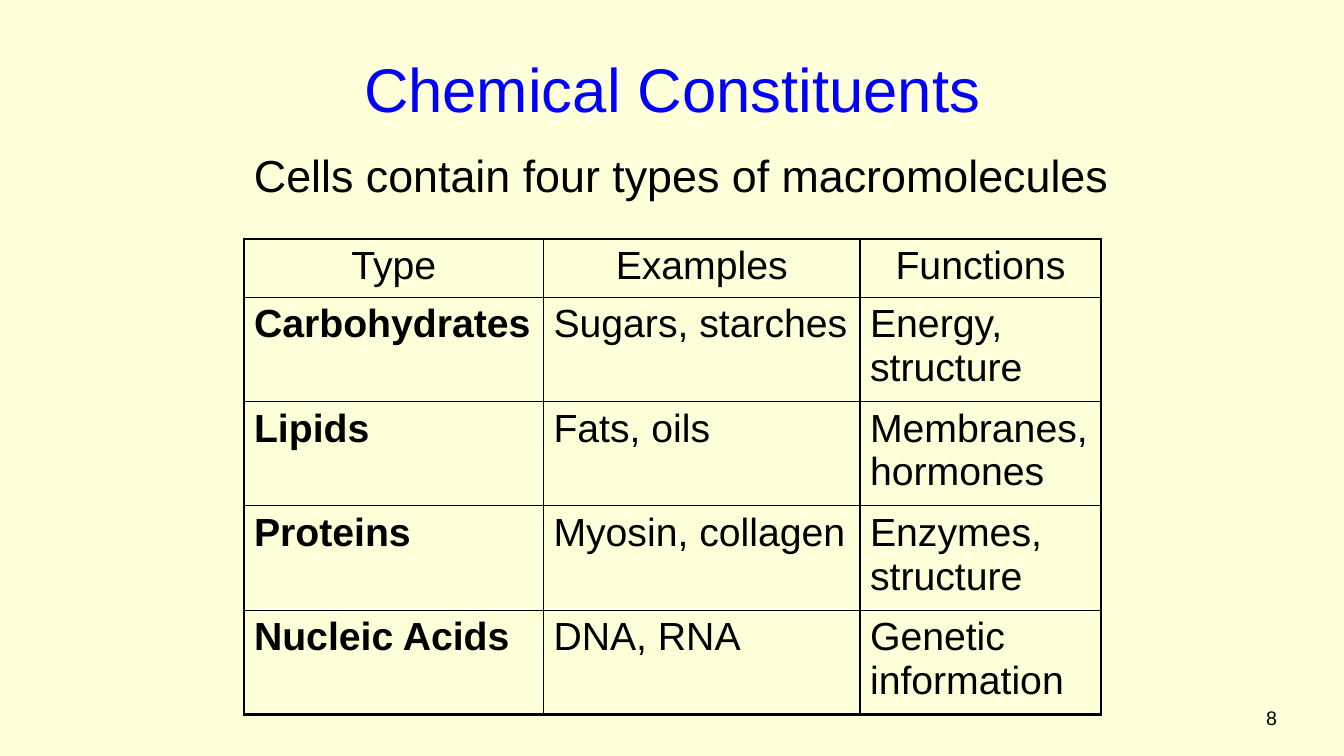
from dataclasses import dataclass

from lxml import etree
from pptx import Presentation
from pptx.dml.color import RGBColor
from pptx.enum import text
from pptx.oxml import ns
from pptx.util import Inches, Pt


@dataclass(frozen=True)
class Theme:
    font: str = "Arial"
    background: str = "FFFFD9"
    title: str = "0000FF"
    ink: str = "000000"
    title_size: int = 44
    body_size: int = 32
    table_size: int = 28
    number_size: int = 14
    outer_line: float = 2.25
    inner_line: float = 1


@dataclass(frozen=True)
class Label:
    words: str
    left: float
    top: float
    width: float
    height: float
    size: int
    color: str
    align: text.PP_ALIGN = text.PP_ALIGN.LEFT
    anchor: text.MSO_ANCHOR = text.MSO_ANCHOR.TOP
    wrap: bool = True


@dataclass(frozen=True)
class Macromolecule:
    kind: str
    examples: str
    functions: str


THEME = Theme()
LABELS = [
    Label("Chemical Constituents", 2.42, 0.25, 8.5, 1.25, THEME.title_size, THEME.title,
          text.PP_ALIGN.CENTER, text.MSO_ANCHOR.MIDDLE),
    Label("Cells contain four types of macromolecules", 2.42, 1.42, 8.92, 0.67,
          THEME.body_size, THEME.ink),
    Label("8", 12.46, 6.95, 0.44, 0.34, THEME.number_size, THEME.ink, wrap=False),
]
ROWS = [
    Macromolecule("Type", "Examples", "Functions"),
    Macromolecule("Carbohydrates", "Sugars, starches", "Energy, structure"),
    Macromolecule("Lipids", "Fats, oils", "Membranes, hormones"),
    Macromolecule("Proteins", "Myosin, collagen", "Enzymes, structure"),
    Macromolecule("Nucleic Acids", "DNA, RNA", "Genetic information"),
]
COLUMN_WIDTHS = [2.97, 3.14, 2.39]
HEADER_HEIGHT, ROW_HEIGHT = 0.58, 1.03


def write(tf, words: str, size: int, color: str, align: text.PP_ALIGN, bold: bool = False) -> None:
    tf.text = words
    p = tf.paragraphs[0]
    p.alignment = align
    font = p.runs[0].font
    font.name, font.size, font.bold = THEME.font, Pt(size), bold
    font.color.rgb = RGBColor.from_string(color)


def add_label(slide, label: Label) -> None:
    sp = slide.shapes.add_textbox(Inches(label.left), Inches(label.top),
                                  Inches(label.width), Inches(label.height))
    tf = sp.text_frame
    tf.word_wrap = label.wrap
    tf.vertical_anchor = label.anchor
    write(tf, label.words, label.size, label.color, label.align)


def add_border(cell, side: str, width: float) -> None:
    tc_pr = cell._tc.get_or_add_tcPr()
    ln = etree.SubElement(tc_pr, ns.qn(f"a:ln{side}"), w=str(Pt(width)))
    fill = etree.SubElement(ln, ns.qn("a:solidFill"))
    etree.SubElement(fill, ns.qn("a:srgbClr"), val=THEME.ink)


def add_macromolecule_table(slide, left: float, top: float) -> None:
    heights = [HEADER_HEIGHT] + [ROW_HEIGHT] * (len(ROWS) - 1)
    frame = slide.shapes.add_table(len(ROWS), len(COLUMN_WIDTHS), Inches(left), Inches(top),
                                   Inches(sum(COLUMN_WIDTHS)), Inches(sum(heights)))
    table = frame.table
    table.first_row = table.horz_banding = False
    for column, width in zip(table.columns, COLUMN_WIDTHS):
        column.width = Inches(width)
    last_row, last_col = len(ROWS) - 1, len(COLUMN_WIDTHS) - 1
    for i, (row, height) in enumerate(zip(ROWS, heights)):
        table.rows[i].height = Inches(height)
        for j, words in enumerate((row.kind, row.examples, row.functions)):
            cell = table.cell(i, j)
            align = text.PP_ALIGN.CENTER if i == 0 else text.PP_ALIGN.LEFT
            write(cell.text_frame, words, THEME.table_size, THEME.ink, align, i > 0 and j == 0)
            edges = {"L": j == 0, "R": j == last_col, "T": i == 0, "B": i == last_row}
            for side, outer in edges.items():
                add_border(cell, side, THEME.outer_line if outer else THEME.inner_line)
            cell.fill.background()


def main() -> None:
    prs = Presentation()
    prs.slide_width, prs.slide_height = Inches(13.33), Inches(7.5)
    slide = prs.slides.add_slide(prs.slide_layouts[6])
    slide.background.fill.solid()
    slide.background.fill.fore_color.rgb = RGBColor.from_string(THEME.background)
    for label in LABELS:
        add_label(slide, label)
    add_macromolecule_table(slide, 2.42, 2.37)
    prs.save("out.pptx")


if __name__ == "__main__":
    main()
